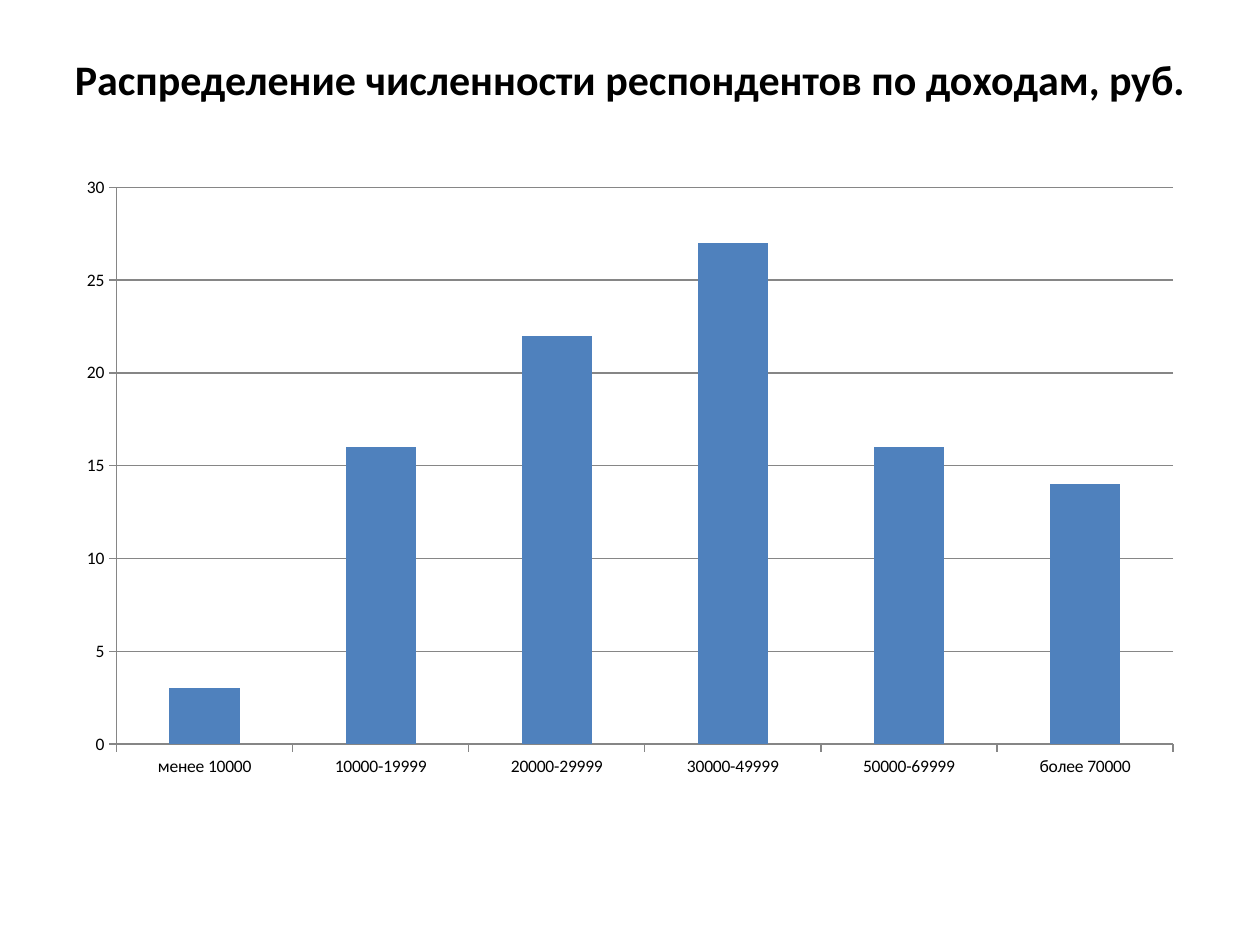
from dataclasses import dataclass

from pptx import Presentation
from pptx.chart.data import CategoryChartData
from pptx.dml.color import RGBColor
from pptx.enum.chart import XL_CHART_TYPE, XL_TICK_MARK
from pptx.enum.text import MSO_ANCHOR, PP_ALIGN
from pptx.util import Inches, Pt

COLUMNS = XL_CHART_TYPE.COLUMN_CLUSTERED
TICK_OUT, TICK_NONE = XL_TICK_MARK.OUTSIDE, XL_TICK_MARK.NONE
MIDDLE, CENTER = MSO_ANCHOR.MIDDLE, PP_ALIGN.CENTER


@dataclass(frozen=True)
class Theme:
    font: str = "Calibri"
    title_size: int = 24
    chart_size: int = 10
    text: RGBColor = RGBColor(0, 0, 0)
    bar: RGBColor = RGBColor(0x4F, 0x81, 0xBD)
    axis: RGBColor = RGBColor(0x86, 0x86, 0x86)


@dataclass(frozen=True)
class Box:
    left: float
    top: float
    width: float
    height: float

    def lengths(self) -> tuple:
        return tuple(Inches(v) for v in (self.left, self.top, self.width, self.height))


THEME = Theme()
TITLE = "Распределение численности респондентов по доходам, руб."
TITLE_BOX = Box(0, 0, 10, 1.25)
CHART_BOX = Box(0.51, 1.31, 8.98, 4.95)
RESPONDENTS = {
    "менее 10000": 3,
    "10000-19999": 16,
    "20000-29999": 22,
    "30000-49999": 27,
    "50000-69999": 16,
    "более 70000": 14,
}


def apply_format(target, values: dict) -> None:
    for name, value in values.items():
        setattr(target, name, value)


def style_font(font, size: int, bold: bool = False) -> None:
    apply_format(font, {"name": THEME.font, "size": Pt(size), "bold": bold})
    font.color.rgb = THEME.text


def style_line(line) -> None:
    line.color.rgb = THEME.axis
    line.width = Pt(0.75)


def add_title(s, text: str, box: Box) -> None:
    tf = s.shapes.add_textbox(*box.lengths()).text_frame
    apply_format(tf, {"word_wrap": True, "vertical_anchor": MIDDLE})
    p = tf.paragraphs[0]
    p.alignment = CENTER
    r = p.add_run()
    r.text = text
    style_font(r.font, THEME.title_size, bold=True)


def add_income_chart(s, values: dict, box: Box) -> None:
    data = CategoryChartData(number_format="###0")
    data.categories = list(values)
    data.add_series("Series 1", list(values.values()))
    chart = s.shapes.add_chart(COLUMNS, *box.lengths(), data).chart
    apply_format(chart, {"has_legend": False, "has_title": False})
    style_font(chart.font, THEME.chart_size)

    plot = chart.plots[0]
    apply_format(plot, {"gap_width": 150, "vary_by_categories": False})
    fill = plot.series[0].format.fill
    fill.solid()
    fill.fore_color.rgb = THEME.bar

    for axis in (chart.category_axis, chart.value_axis):
        apply_format(axis, {"major_tick_mark": TICK_OUT, "minor_tick_mark": TICK_NONE})
        style_line(axis.format.line)
    apply_format(
        chart.value_axis,
        {"minimum_scale": 0, "maximum_scale": 30, "major_unit": 5, "has_major_gridlines": True},
    )
    style_line(chart.value_axis.major_gridlines.format.line)
    apply_format(
        chart.value_axis.tick_labels,
        {"number_format": "###0", "number_format_is_linked": False},
    )


def main() -> None:
    """Build the slide showing respondents by income."""
    prs = Presentation()
    apply_format(prs, {"slide_width": Inches(10), "slide_height": Inches(7.5)})
    s = prs.slides.add_slide(prs.slide_layouts[6])
    add_title(s, TITLE, TITLE_BOX)
    add_income_chart(s, RESPONDENTS, CHART_BOX)
    prs.save("out.pptx")


if __name__ == "__main__":
    main()
